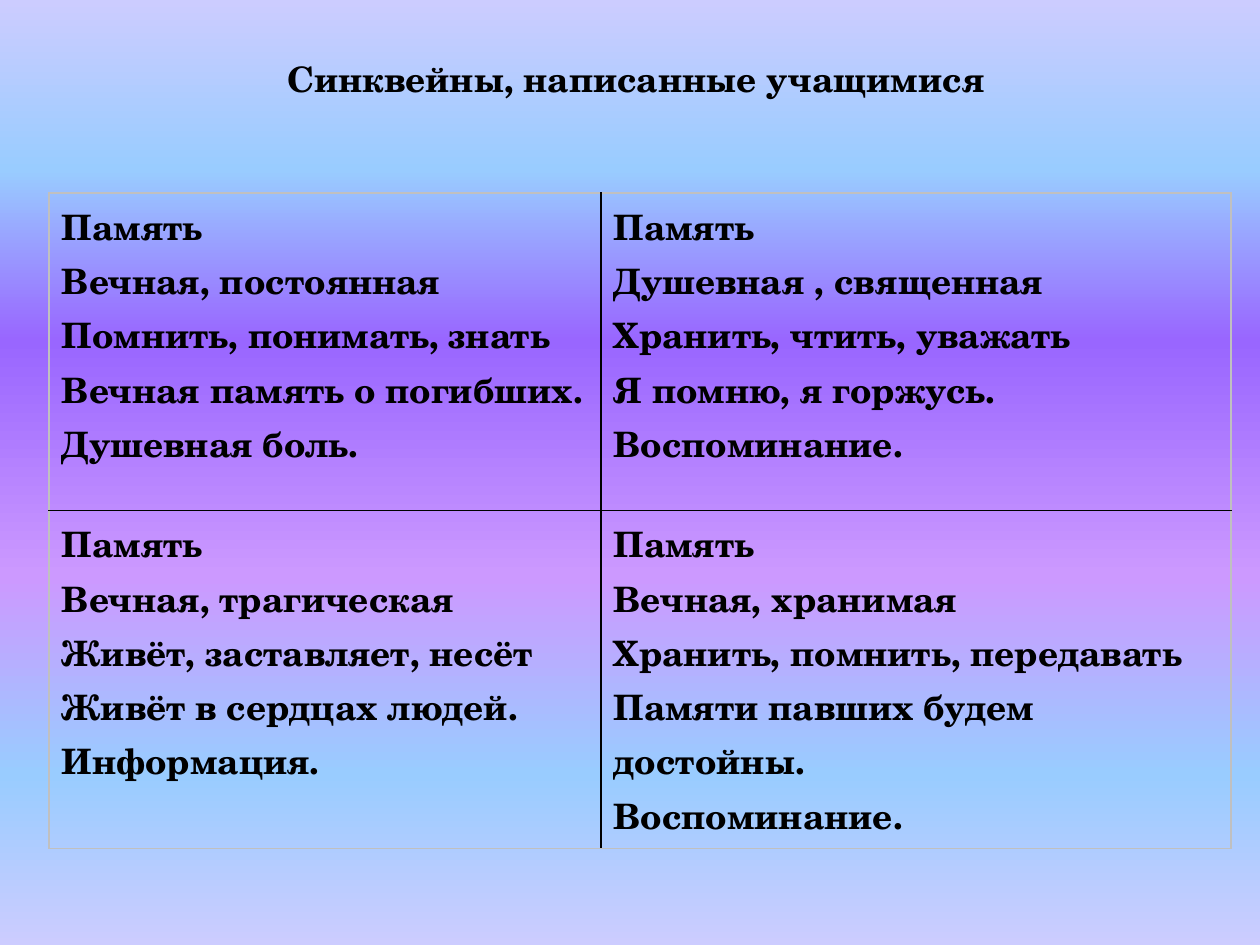
"""Build a slide with a two-by-two table of cinquains on a gradient background."""
from lxml.etree import SubElement
from pptx import Presentation
from pptx.dml.color import RGBColor
from pptx.enum.text import MSO_ANCHOR, PP_ALIGN
from pptx.oxml.ns import qn
from pptx.util import Inches, Pt

FONT = "TeX Gyre Schola"
BLACK = RGBColor(0x00, 0x00, 0x00)
SILVER = RGBColor(0xC0, 0xC0, 0xC0)
LAVENDER = RGBColor(0xCC, 0xCC, 0xFF)
SKY = RGBColor(0x99, 0xCC, 0xFF)
VIOLET = RGBColor(0x99, 0x66, 0xFF)
LILAC = RGBColor(0xCC, 0x99, 0xFF)
GRADIENT = [(0, LAVENDER), (18, SKY), (36, VIOLET), (61, LILAC), (82, SKY), (100, LAVENDER)]
CINQUAINS = [
    [
        ["Память", "Вечная, постоянная", "Помнить, понимать, знать",
         "Вечная память о погибших.", "Душевная боль."],
        ["Память", "Душевная , священная", "Хранить, чтить, уважать",
         "Я помню, я горжусь.", "Воспоминание."],
    ],
    [
        ["Память", "Вечная, трагическая", "Живёт, заставляет, несёт",
         "Живёт в сердцах людей.", "Информация."],
        ["Память", "Вечная, хранимая", "Хранить, помнить, передавать",
         "Памяти павших будем достойны.", "Воспоминание."],
    ],
]


def style_paragraph(paragraph):
    paragraph.font.name = FONT
    paragraph.font.size = Pt(20)
    paragraph.font.bold = True
    paragraph.font.color.rgb = BLACK


def add_border(cell, side, color):
    properties = cell._tc.get_or_add_tcPr()
    line = SubElement(properties, qn(f"a:{side}"), w=str(Pt(1)))
    fill = SubElement(line, qn("a:solidFill"))
    SubElement(fill, qn("a:srgbClr"), val=str(color))


presentation = Presentation()
presentation.slide_width = Inches(10)
presentation.slide_height = Inches(7.5)
slide = presentation.slides.add_slide(presentation.slide_layouts[6])

background = slide.background.fill
background.gradient()
background.gradient_angle = 270
stops = slide.element.find(".//" + qn("a:gsLst"))
stops.clear()
for position, color in GRADIENT:
    stop = SubElement(stops, qn("a:gs"), pos=str(position * 1000))
    SubElement(stop, qn("a:srgbClr"), val=str(color))

title = slide.shapes.add_textbox(Inches(0.55), Inches(0.31), Inches(9), Inches(0.63))
title.text_frame.word_wrap = True
title.text_frame.vertical_anchor = MSO_ANCHOR.MIDDLE
title.text_frame.text = "Синквейны, написанные учащимися"
title.text_frame.paragraphs[0].alignment = PP_ALIGN.CENTER
style_paragraph(title.text_frame.paragraphs[0])

table = slide.shapes.add_table(
    2, 2, Inches(0.39), Inches(1.53), Inches(9.38), Inches(5.03)
).table
table.columns[0].width = Inches(4.38)
table.columns[1].width = Inches(5)
for row, cinquains in enumerate(CINQUAINS):
    table.rows[row].height = Inches(2.52)
    for column, lines in enumerate(cinquains):
        cell = table.cell(row, column)
        cell.text = "\n".join(lines)
        for paragraph in cell.text_frame.paragraphs:
            style_paragraph(paragraph)
            paragraph.line_spacing = Pt(31)
        add_border(cell, "lnL", BLACK if column == 1 else SILVER)
        add_border(cell, "lnR", BLACK if column == 0 else SILVER)
        add_border(cell, "lnT", BLACK if row == 1 else SILVER)
        add_border(cell, "lnB", BLACK if row == 0 else SILVER)
        cell.fill.background()

presentation.save("out.pptx")
